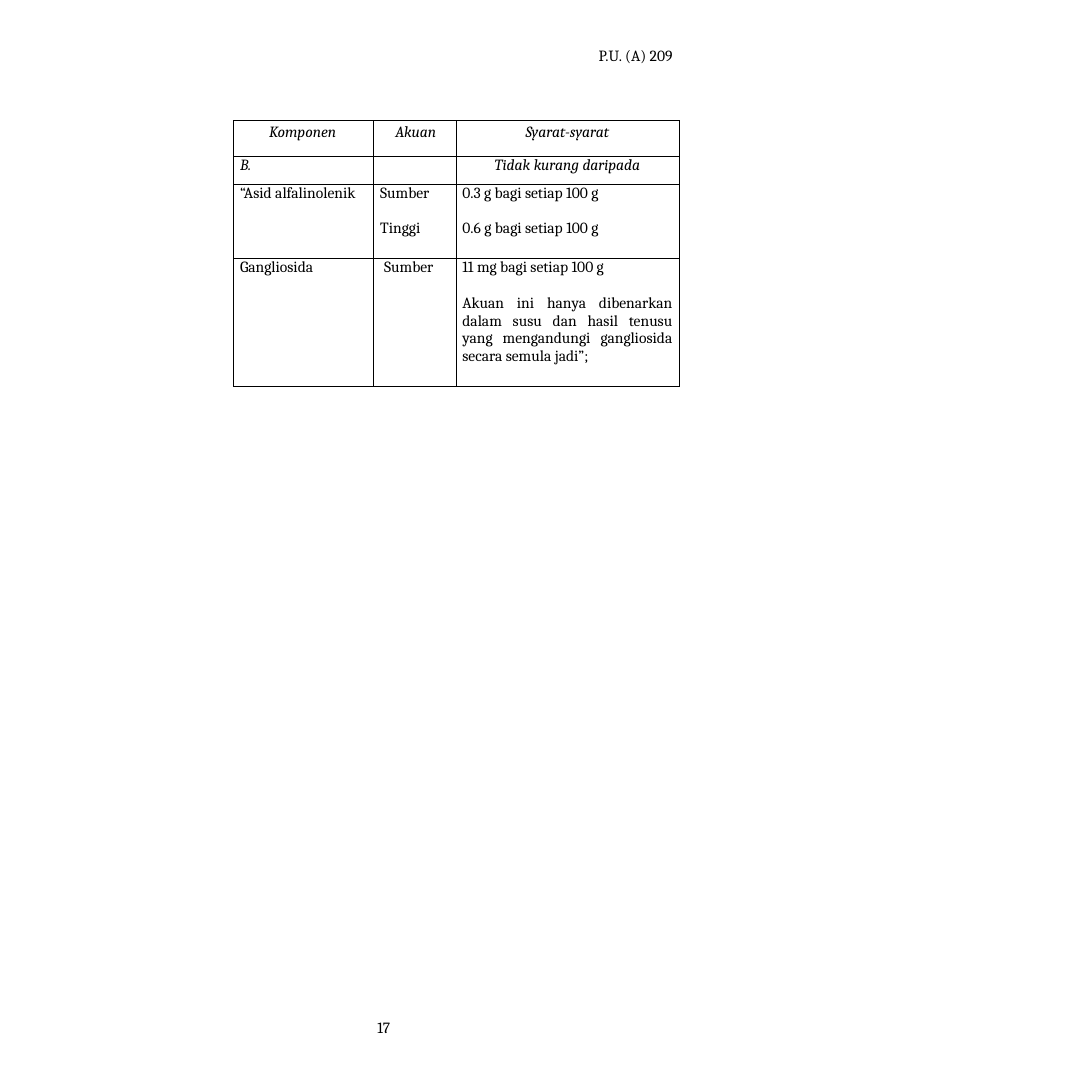
from lxml import etree
from pptx import Presentation
from pptx.dml.color import RGBColor
from pptx.enum.text import PP_ALIGN
from pptx.oxml.ns import qn
from pptx.util import Inches, Pt

LEFT, MID, RIGHT, FULL = (PP_ALIGN.LEFT, PP_ALIGN.CENTER,
                          PP_ALIGN.RIGHT, PP_ALIGN.JUSTIFY)
FONT, SIZE, INK = "Cambria", 12, "000000"
PAD = 0.07
COLS = [1.5, 0.88, 2.39]
ROWS = [0.38, 0.3, 0.79, 1.38]

# Each cell is a list of paragraphs: text and format
HEAD = dict(italic=True, before=2.2)
SUB = dict(italic=True, line=Pt(13.9))
BODY = dict(line=Pt(14.1))
NEXT = dict(before=13.2)
CELLS = [
    [[("Komponen", HEAD)],
     [("Akuan", dict(HEAD, align=RIGHT))],
     [("Syarat-syarat", dict(HEAD, align=MID))]],
    [[("B.", SUB)],
     [],
     [("Tidak kurang daripada", dict(SUB, align=MID))]],
    [[("“Asid alfalinolenik", BODY)],
     [("Sumber", BODY), ("Tinggi", NEXT)],
     [("0.3 g bagi setiap 100 g", BODY), ("0.6 g bagi setiap 100 g", NEXT)]],
    [[("Gangliosida", BODY)],
     [("Sumber", dict(BODY, align=RIGHT))],
     [("11 mg bagi setiap 100 g", dict(BODY, align=FULL)),
      ("Akuan ini hanya dibenarkan dalam susu dan hasil tenusu yang "
       "mengandungi gangliosida secara semula jadi”;",
       dict(align=FULL, before=14.2, line=0.98))]],
]
# Left and right margins that differ from the common padding
SIDES = {(0, 0): (0.38, 0), (0, 1): (0, 0.21), (3, 1): (0, 0.24)}


def color(code):
    return RGBColor.from_string(code)


def write(para, text, align=LEFT, italic=False, before=0, line=None):
    para.alignment = align
    para.space_before = Pt(before)
    if line:
        para.line_spacing = line
    run = para.add_run()
    run.text = text
    font = run.font
    font.name, font.size = FONT, Pt(SIZE)
    font.bold, font.italic = False, italic
    font.color.rgb = color(INK)


def label(slide, box, text, **form):
    frame = slide.shapes.add_textbox(*map(Inches, box)).text_frame
    frame.margin_left = frame.margin_right = frame.margin_bottom = 0
    frame.margin_top = Inches(0.01)
    frame.word_wrap = False
    write(frame.paragraphs[0], text, **form)


def border(cell):
    props = cell._tc.get_or_add_tcPr()
    for side in ("lnL", "lnR", "lnT", "lnB"):
        edge = etree.SubElement(props, qn("a:" + side), w=str(Pt(0.5)))
        fill = etree.SubElement(edge, qn("a:solidFill"))
        etree.SubElement(fill, qn("a:srgbClr"), val=INK)


def grid(slide, left, top):
    table = slide.shapes.add_table(
        len(ROWS), len(COLS), Inches(left), Inches(top),
        Inches(sum(COLS)), Inches(sum(ROWS))).table
    table.first_row = table.horz_banding = False
    for col, width in zip(table.columns, COLS):
        col.width = Inches(width)
    for r, tall in enumerate(ROWS):
        table.rows[r].height = Inches(tall)
        for c, paras in enumerate(CELLS[r]):
            cell = table.cell(r, c)
            near, far = SIDES.get((r, c), (PAD, PAD))
            cell.margin_left, cell.margin_right = Inches(near), Inches(far)
            cell.margin_top = Inches(0 if r else 0.03)
            cell.margin_bottom = 0
            border(cell)
            cell.fill.background()
            frame = cell.text_frame
            for i, (text, form) in enumerate(paras):
                para = frame.add_paragraph() if i else frame.paragraphs[0]
                write(para, text, **form)


def main():
    deck = Presentation()
    deck.slide_width = deck.slide_height = Inches(11.69)
    slide = deck.slides.add_slide(deck.slide_layouts[6])
    # Page head, table and page number
    label(slide, (6.41, 0.48, 0.87, 0.23), "P.U. (A) 209", before=1)
    grid(slide, 2.5, 1.29)
    label(slide, (4.04, 10.89, 0.24, 0.22), "17", before=0.4)
    deck.save("out.pptx")


if __name__ == "__main__":
    main()
